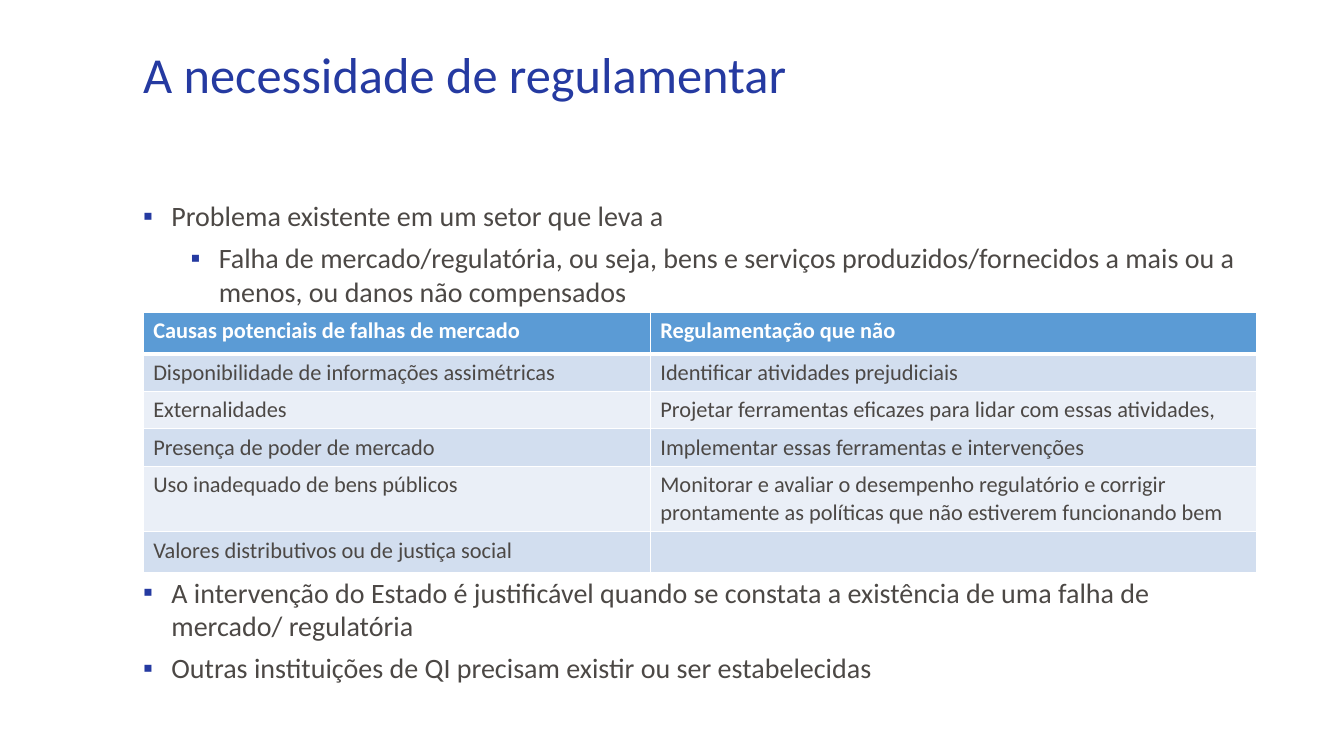
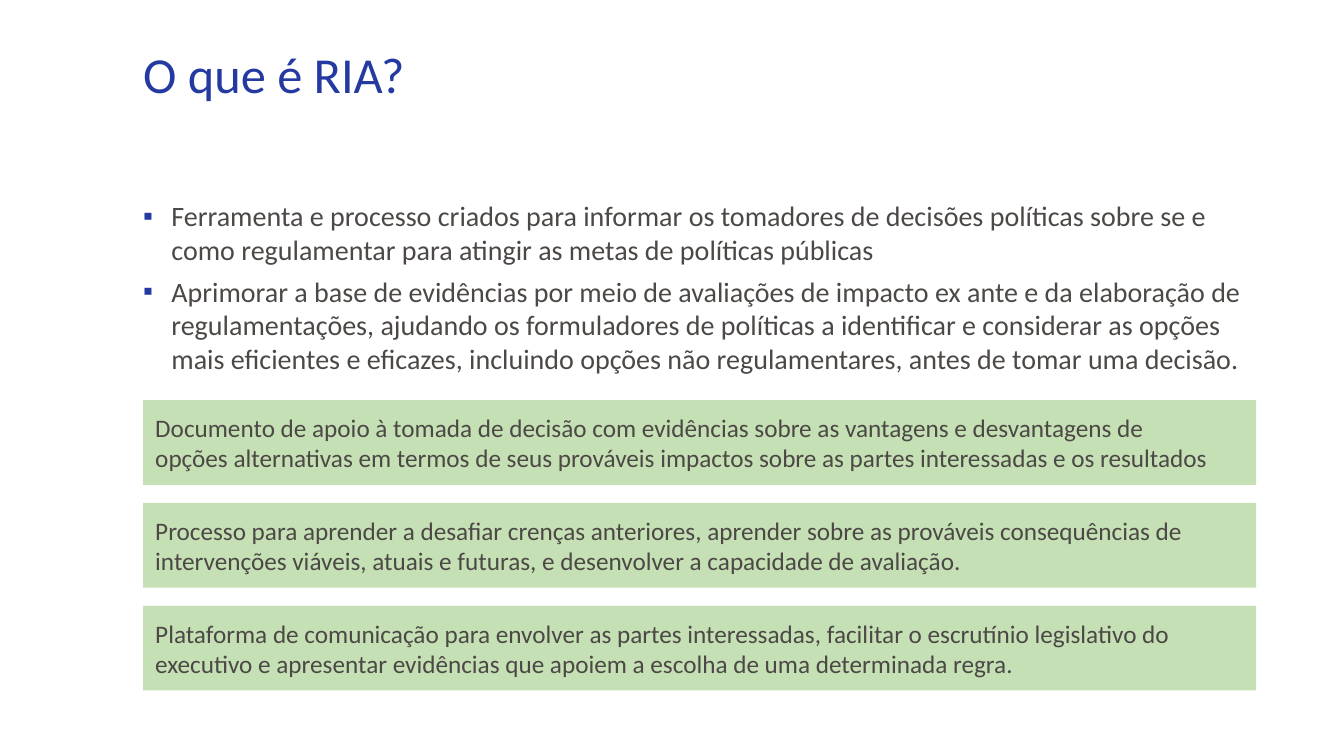
from lxml.etree import SubElement
from pptx import Presentation
from pptx.dml.color import RGBColor
from pptx.enum.shapes import MSO_SHAPE
from pptx.enum.text import MSO_ANCHOR, MSO_AUTO_SIZE, PP_ALIGN
from pptx.oxml import parse_xml
from pptx.oxml.ns import nsdecls, qn
from pptx.util import Pt

PX = 9144  # 100 px to the inch
FONT = "Calibri"
NAVY, GREY, WHITE, GREEN = "253AA1", "4C4845", "FFFFFF", "C5E0B4"
HEADER_FILL, BANDS = "5B9BD5", ("EAEFF7", "D2DEEF")

LEFT, WIDTH = 142, 1104
TITLE_BOX = (LEFT, 0, 976, 145)
BODY_BOX = (LEFT, 197, WIDTH, 476)
TABLE_TOP, TABLE_SPACE = 310, 185  # space in points left between bullets
COLUMNS, ROWS = (503, 601), (41, 37, 37, 37, 65, 40)
CARD_TOP, CARD_HEIGHT, CARD_GAP, CARD_INSET = 397, 84, 18, 12

# Bullets: (level, space before in points, text)
NEED_TITLE = "A necessidade de regulamentar"
NEED_BULLETS = [
    (0, 0, "Problema existente em um setor que leva a"),
    (1, 0, "Falha de mercado/regulatória, ou seja, bens e serviços produzidos/fornecidos "
           "a mais ou a menos, ou danos não compensados"),
    (0, TABLE_SPACE, "A intervenção do Estado é justificável quando se constata a existência "
                     "de uma falha de mercado/ regulatória"),
    (0, 0, "Outras instituições de QI precisam existir ou ser estabelecidas"),
]
CAUSES = [
    ("Causas potenciais de falhas de mercado", "Regulamentação que não"),
    ("Disponibilidade de informações assimétricas", "Identificar atividades prejudiciais"),
    ("Externalidades", "Projetar ferramentas eficazes para lidar com essas atividades,"),
    ("Presença de poder de mercado", "Implementar essas ferramentas e intervenções"),
    ("Uso inadequado de bens públicos",
     "Monitorar e avaliar o desempenho regulatório e corrigir prontamente as políticas "
     "que não estiverem funcionando bem"),
    ("Valores distributivos ou de justiça social", ""),
]
RIA_TITLE = "O que é RIA?"
RIA_BULLETS = [
    (0, 0, "Ferramenta e processo criados para informar os tomadores de decisões políticas "
           "sobre se e como regulamentar para atingir as metas de políticas públicas"),
    (0, 0, "Aprimorar a base de evidências por meio de avaliações de impacto ex ante e da "
           "elaboração de regulamentações, ajudando os formuladores de políticas a identificar "
           "e considerar as opções mais eficientes e eficazes, incluindo opções não "
           "regulamentares, antes de tomar uma decisão."),
]
RIA_CARDS = [
    ["Documento de apoio à tomada de decisão com evidências sobre as vantagens e desvantagens de",
     "opções alternativas em termos de seus prováveis impactos sobre as partes interessadas "
     "e os resultados"],
    ["Processo para aprender a desafiar crenças anteriores, aprender sobre as prováveis "
     "consequências de intervenções viáveis, atuais e futuras, e desenvolver a capacidade "
     "de avaliação."],
    ["Plataforma de comunicação para envolver as partes interessadas, facilitar o escrutínio "
     "legislativo do executivo e apresentar evidências que apoiem a escolha de uma "
     "determinada regra."],
]


def rgb(color):
    return RGBColor.from_string(color)


def paint(part, color):
    part.fill.solid()
    part.fill.fore_color.rgb = rgb(color)


def add_text(p, text, size, color=GREY, bold=False):
    p.alignment = PP_ALIGN.LEFT
    r = p.add_run()
    r.text = text
    for name, value in {"name": FONT, "size": Pt(size), "bold": bold}.items():
        setattr(r.font, name, value)
    r.font.color.rgb = rgb(color)


def set_frame(tf, inset, anchor):
    formats = {"word_wrap": True, "auto_size": MSO_AUTO_SIZE.NONE, "vertical_anchor": anchor}
    for side in ("left", "top", "right", "bottom"):
        formats[f"margin_{side}"] = inset * PX
    for name, value in formats.items():
        setattr(tf, name, value)


def place(shape, box):
    for name, value in zip(("left", "top", "width", "height"), box):
        setattr(shape, name, value * PX)


def paragraphs(tf, items):
    """Pair each item with a paragraph, the first one being already there."""
    for i, item in enumerate(items):
        yield (tf.add_paragraph() if i else tf.paragraphs[0]), item


def add_bullet(p, level):
    p.level = level
    pPr = p._p.get_or_add_pPr()
    pPr.set("marL", str((28 + 47 * level) * PX))
    pPr.set("indent", str(-28 * PX))
    SubElement(SubElement(pPr, qn("a:buClr")), qn("a:srgbClr")).set("val", NAVY)
    SubElement(pPr, qn("a:buChar")).set("char", "▪")


def add_slide(prs, title, bullets):
    s = prs.slides.add_slide(prs.slide_layouts[1])
    heading, body = s.placeholders
    place(heading, TITLE_BOX)
    set_frame(heading.text_frame, 0, MSO_ANCHOR.MIDDLE)
    add_text(heading.text_frame.paragraphs[0], title, 36, NAVY)
    place(body, BODY_BOX)
    set_frame(body.text_frame, 0, MSO_ANCHOR.TOP)
    for p, (level, before, text) in paragraphs(body.text_frame, bullets):
        add_bullet(p, level)
        p.space_before, p.space_after = Pt(before), Pt(6)
        add_text(p, text, 20)
    return s


def set_borders(cell, row):
    """White lines, with a thicker one under the header row."""
    widths = {"lnL": 1, "lnR": 1, "lnT": 3 if row == 1 else 1, "lnB": 3 if row == 0 else 1}
    tcPr = cell._tc.get_or_add_tcPr()
    for i, (tag, width) in enumerate(widths.items()):
        tcPr.insert(i, parse_xml(
            f'<a:{tag} {nsdecls("a")} w="{Pt(width)}"><a:solidFill>'
            f'<a:srgbClr val="{WHITE}"/></a:solidFill></a:{tag}>'))


def add_causes_table(s):
    box = (LEFT, TABLE_TOP, WIDTH, sum(ROWS))
    table = s.shapes.add_table(len(ROWS), len(COLUMNS), *(n * PX for n in box)).table
    for column, width in zip(table.columns, COLUMNS):
        column.width = width * PX
    for i, (height, texts) in enumerate(zip(ROWS, CAUSES)):
        table.rows[i].height = height * PX
        header = i == 0
        for j, text in enumerate(texts):
            cell = table.cell(i, j)
            paint(cell, HEADER_FILL if header else BANDS[i % 2])
            set_borders(cell, i)
            if text:
                add_text(cell.text_frame.paragraphs[0], text, 16,
                         WHITE if header else GREY, header)


def add_cards(s):
    for i, lines in enumerate(RIA_CARDS):
        box = (LEFT, CARD_TOP + i * (CARD_HEIGHT + CARD_GAP), WIDTH, CARD_HEIGHT)
        card = s.shapes.add_shape(MSO_SHAPE.RECTANGLE, *(n * PX for n in box))
        card.shadow.inherit = False
        paint(card, GREEN)
        card.line.fill.background()
        set_frame(card.text_frame, CARD_INSET, MSO_ANCHOR.MIDDLE)
        for p, line in paragraphs(card.text_frame, lines):
            add_text(p, line, 18)


def main():
    prs = Presentation()
    prs.slide_width, prs.slide_height = 1333 * PX, 750 * PX
    add_causes_table(add_slide(prs, NEED_TITLE, NEED_BULLETS))
    add_cards(add_slide(prs, RIA_TITLE, RIA_BULLETS))
    prs.save("out.pptx")


if __name__ == "__main__":
    main()
